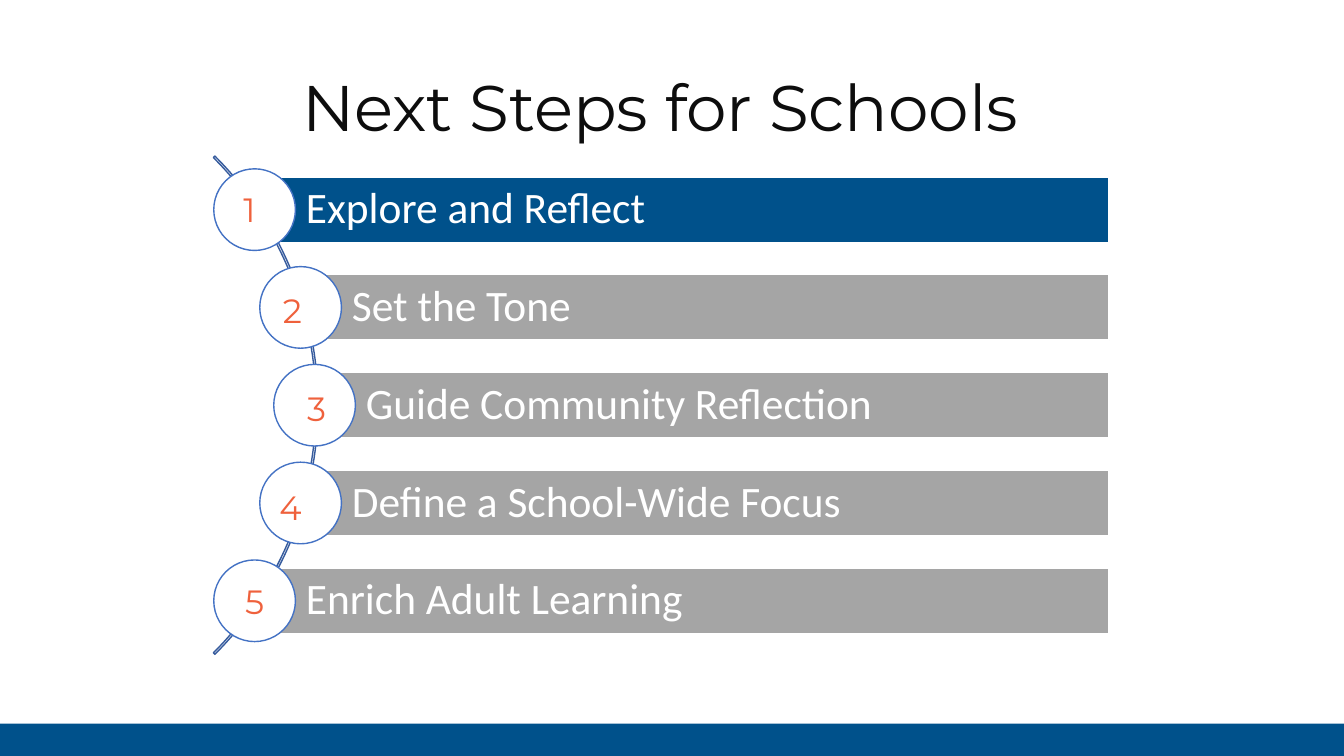
import math

from pptx import Presentation
from pptx.dml.color import RGBColor
from pptx.enum import shapes, text
from pptx.util import Inches, Pt

TITLE = "Next Steps for Schools"
# Step name, then the shift of its numeral from the circle centre (inches)
STEPS = [
    ("Explore and Reflect", (-0.05, 0)),
    ("Set the Tone", (-0.08, 0.03)),
    ("Guide Community Reflection", (0.02, 0.03)),
    ("Define a School-Wide Focus", (-0.1, 0.04)),
    ("Enrich Adult Learning", (0, 0)),
]
THEME = {
    "blue": "00518B", "gray": "A5A5A5", "white": "FFFFFF", "ink": "0D0D0D",
    "orange": "EF613C", "ring": "4472C4", "arc": "365B9D",
    "heading_font": "Montserrat", "body_font": "Calibri",
    "title_size": 46, "step_size": 31, "number_size": 24,
}

SLIDE_WIDTH, SLIDE_HEIGHT = 13.33, 7.5
ARC_X, ARC_Y, ARC_SIZE = -0.34, 4.02, 6.99
ORBIT = 3.46  # distance of the circle centres from the arc centre
STEP_GAP = 0.97
BAR_RIGHT, BAR_HEIGHT = 11.0, 0.65
CIRCLE = 0.81
NUMBER_WIDTH, NUMBER_HEIGHT = 0.62, 0.5
FOOTER_HEIGHT = 0.32


def color(name):
    return RGBColor.from_string(THEME[name])


def centered(x, y, width, height):
    return x - width / 2, y - height / 2, width, height


def add_shape(slide, kind, box, fill=None, line=None):
    shape = slide.shapes.add_shape(kind, *map(Inches, box))
    shape.shadow.inherit = False
    if fill:
        shape.fill.solid()
        shape.fill.fore_color.rgb = color(fill)
    else:
        shape.fill.background()
    if line:
        shape.line.color.rgb = color(line)
        shape.line.width = Pt(1)
    else:
        shape.line.fill.background()
    return shape


def write(shape, words, font, size, ink, align, frame_format=None, spacing=None):
    frame = shape.text_frame
    frame.word_wrap = True
    for name, value in (frame_format or {}).items():
        setattr(frame, name, value)
    paragraph = frame.paragraphs[0]
    paragraph.text = words
    paragraph.alignment = align
    paragraph.line_spacing = spacing
    for name, value in {"name": THEME[font], "size": Pt(THEME[size])}.items():
        setattr(paragraph.font, name, value)
    paragraph.font.color.rgb = color(ink)


def add_heading_text(slide, words, box, size, ink):
    write(slide.shapes.add_textbox(*map(Inches, box)), words, "heading_font", size, ink,
          text.PP_ALIGN.CENTER, {"auto_size": text.MSO_AUTO_SIZE.SHAPE_TO_FIT_TEXT})


def add_step(slide, index, name, shift):
    """Add a bar and its numbered circle, centred on the orbit."""
    rise = (index - (len(STEPS) - 1) / 2) * STEP_GAP
    x, y = ARC_X + math.sqrt(ORBIT ** 2 - rise ** 2), ARC_Y + rise
    bar = add_shape(slide, shapes.MSO_SHAPE.RECTANGLE,
                    (x, y - BAR_HEIGHT / 2, BAR_RIGHT - x, BAR_HEIGHT),
                    "gray" if index else "blue", "white")
    margins = {"margin_left": 0.51, "margin_top": 0.09,
               "margin_right": 0.09, "margin_bottom": 0.09}
    frame_format = {side: Inches(size) for side, size in margins.items()}
    frame_format["vertical_anchor"] = text.MSO_ANCHOR.MIDDLE
    write(bar, name, "body_font", "step_size", "white",
          text.PP_ALIGN.LEFT, frame_format, 0.9)
    add_shape(slide, shapes.MSO_SHAPE.OVAL, centered(x, y, CIRCLE, CIRCLE), "white", "ring")
    add_heading_text(slide, str(index + 1),
                     centered(x + shift[0], y + shift[1], NUMBER_WIDTH, NUMBER_HEIGHT),
                     "number_size", "orange")


def main():
    presentation = Presentation()
    presentation.slide_width = Inches(SLIDE_WIDTH)
    presentation.slide_height = Inches(SLIDE_HEIGHT)
    slide = presentation.slides.add_slide(presentation.slide_layouts[6])

    add_heading_text(slide, TITLE, (1.45, 0.62, 10.19, 0.88), "title_size", "ink")
    arc = add_shape(slide, shapes.MSO_SHAPE.BLOCK_ARC,
                    centered(ARC_X, ARC_Y, ARC_SIZE, ARC_SIZE), line="arc")
    for index, value in enumerate((189, 27, 0.003)):
        arc.adjustments[index] = value
    for index, (name, shift) in enumerate(STEPS):
        add_step(slide, index, name, shift)
    add_shape(slide, shapes.MSO_SHAPE.RECTANGLE,
              (0, SLIDE_HEIGHT - FOOTER_HEIGHT, SLIDE_WIDTH, FOOTER_HEIGHT), "blue")
    presentation.save("out.pptx")


if __name__ == "__main__":
    main()
